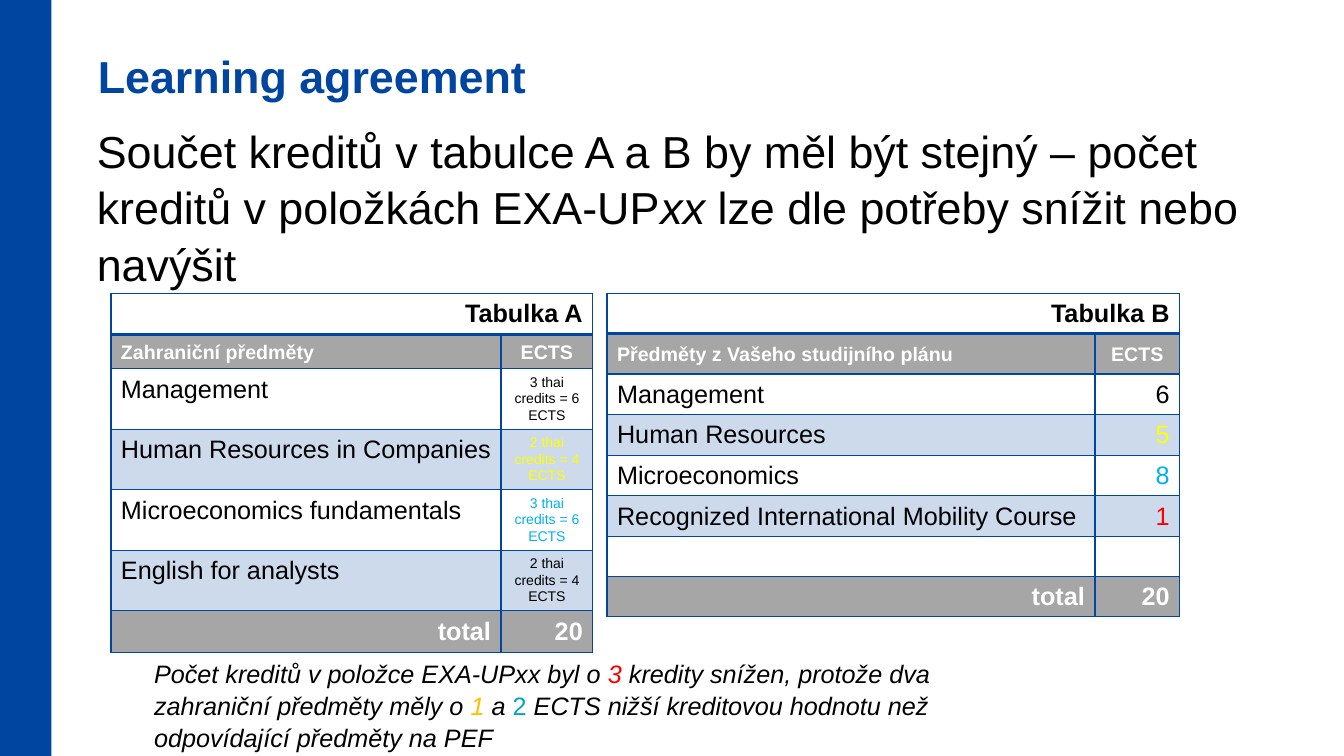
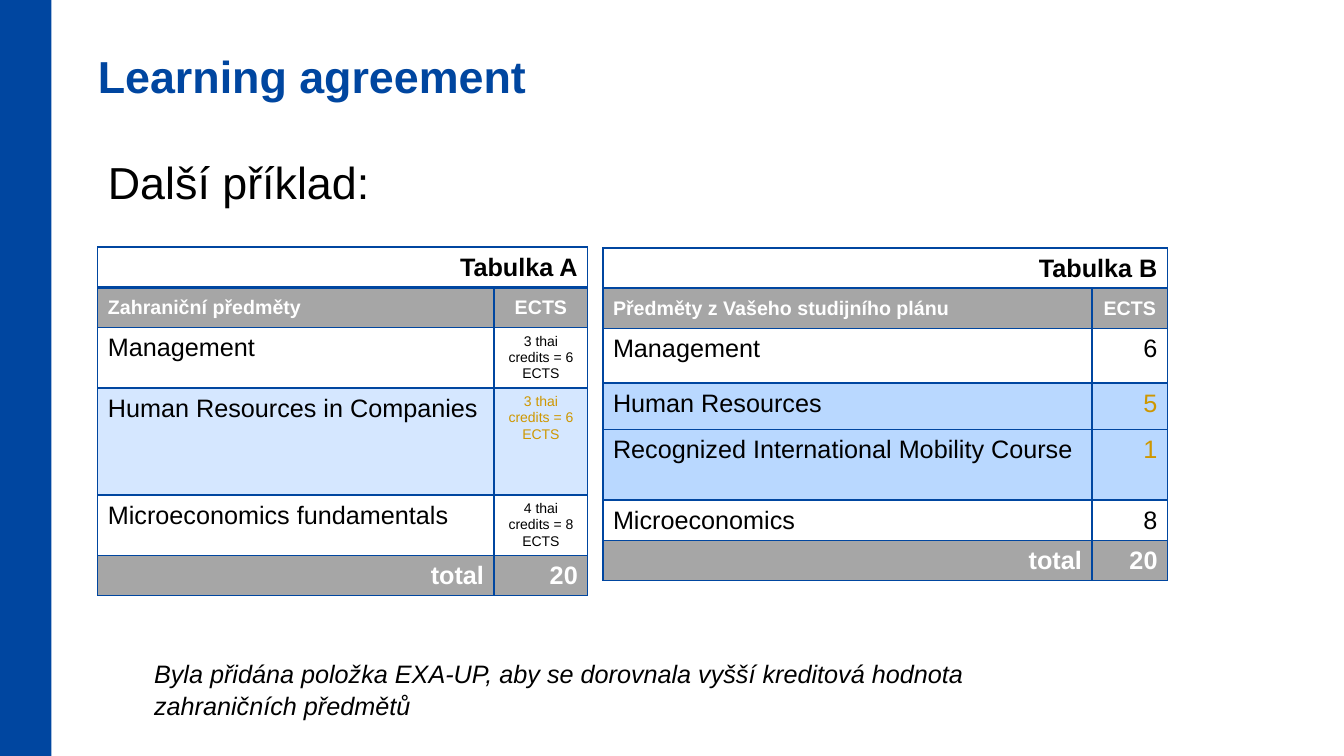
from dataclasses import dataclass

from lxml.etree import SubElement
from pptx import Presentation
from pptx.dml.color import RGBColor
from pptx.enum.shapes import MSO_SHAPE
from pptx.enum.text import MSO_ANCHOR, MSO_AUTO_SIZE, PP_ALIGN
from pptx.oxml import parse_xml
from pptx.oxml.ns import nsdecls, qn
from pptx.util import Inches, Pt


@dataclass(frozen=True)
class Theme:
    font: str = "Arial"
    blue: str = "0046A0"
    sky: str = "2D89FF"
    pale: str = "B9D8FF"
    gray: str = "A6A6A6"
    white: str = "FFFFFF"
    black: str = "000000"
    yellow: str = "FFFF00"
    cyan: str = "00B0F0"
    red: str = "FF0000"
    amber: str = "FFC000"
    teal: str = "00AAB4"
    ochre: str = "CE9700"
    heading: int = 32
    text: int = 18
    header: int = 14
    small: int = 10
    line_spacing: float = 1.05


theme = Theme()
LEFT, CENTER, RIGHT = PP_ALIGN.LEFT, PP_ALIGN.CENTER, PP_ALIGN.RIGHT


def write(frame, runs, size, color=theme.black, bold=False, italic=False, align=LEFT):
    paragraph = frame.paragraphs[0]
    properties = paragraph._p.get_or_add_pPr()
    properties.set("marL", "0")
    properties.set("indent", "0")
    SubElement(properties, qn("a:buNone"))
    paragraph.alignment = align
    paragraph.line_spacing = theme.line_spacing
    paragraph.space_before = Pt(0)
    font = paragraph.font
    font.name, font.size, font.bold, font.italic = theme.font, Pt(size), bold, italic
    font.color.rgb = RGBColor.from_string(color)
    for text, run_color, run_italic in runs:
        run = paragraph.add_run()
        run.text = text
        if run_color:
            run.font.color.rgb = RGBColor.from_string(run_color)
        if run_italic is not None:
            run.font.italic = run_italic


def style_cell(cell, text, size, fill, alpha=100, top=1, bottom=1, **style):
    cell.fill.solid()
    cell.fill.fore_color.rgb = RGBColor.from_string(fill)
    properties = cell._tc.get_or_add_tcPr()
    if alpha < 100:
        SubElement(properties.find(".//" + qn("a:srgbClr")), qn("a:alpha"), val=str(alpha * 1000))
    for position, (side, width) in enumerate(zip("LRTB", (1, 1, top, bottom))):
        properties.insert(position, parse_xml(
            f'<a:ln{side} {nsdecls("a")} w="{Pt(width)}"><a:solidFill>'
            f'<a:srgbClr val="{theme.blue}"/></a:solidFill></a:ln{side}>'))
    write(cell.text_frame, [(text, None, None)] if text else [], size, **style)


plain = (theme.white, 100)
tint = (theme.blue, 20)
sky_tint = (theme.sky, 20)
pale = (theme.pale, 100)
foreign = dict(name="Tabulka A", subjects="Zahraniční předměty",
               credit_size=theme.small, credit_align=CENTER)
home = dict(name="Tabulka B", subjects="Předměty z Vašeho studijního plánu",
            credit_size=theme.text, credit_align=RIGHT)

examples = [
    dict(
        intro=[
            ("Součet kreditů v tabulce A a B by měl být stejný – počet kreditů v položkách EXA-UP", None, None),
            ("xx", None, True),
            (" lze dle potřeby snížit nebo navýšit", None, None),
        ],
        intro_box=(0.86, 1.15, 12.17, 1.71),
        tables=[
            dict(foreign, at=(1.1, 2.91), columns=(3.87, 0.91), heights=(0.41, 0.34, 0.41), courses=[
                ("Management", "3 thai credits = 6 ECTS", theme.black, plain, 0.6),
                ("Human Resources in Companies", "2 thai credits = 4 ECTS", theme.yellow, tint, 0.6),
                ("Microeconomics fundamentals", "3 thai credits = 6 ECTS", theme.cyan, plain, 0.6),
                ("English for analysts", "2 thai credits = 4 ECTS", theme.black, tint, 0.6),
            ]),
            dict(home, at=(6.02, 2.91), columns=(4.84, 0.84), heights=(0.4, 0.4, 0.4), courses=[
                ("Management", "6", theme.black, plain, 0.4),
                ("Human Resources", "5", theme.yellow, tint, 0.41),
                ("Microeconomics", "8", theme.cyan, plain, 0.4),
                ("Recognized International Mobility Course", "1", theme.red, tint, 0.4),
                ("", "", theme.black, plain, 0.4),
            ]),
        ],
        note=[
            ("Počet kreditů v položce EXA-UPxx byl o ", None, None),
            ("3", theme.red, None),
            (" kredity snížen, protože dva zahraniční předměty měly o ", None, None),
            ("1", theme.amber, None),
            (" a ", None, None),
            ("2 ", theme.teal, False),
            ("ECTS nižší kreditovou hodnotu než odpovídající předměty na PEF", None, None),
        ],
        note_height=1.01,
    ),
    dict(
        intro=[("Další příklad:", None, None)],
        intro_box=(0.97, 1.46, 12.17, 0.64),
        tables=[
            dict(foreign, at=(0.97, 2.45), columns=(3.93, 0.93), heights=(0.4, 0.4, 0.4), courses=[
                ("Management", "3 thai credits = 6 ECTS", theme.black, plain, 0.6),
                ("Human Resources in Companies", "3 thai credits = 6 ECTS", theme.ochre, sky_tint, 1.06),
                ("Microeconomics fundamentals", "4 thai credits = 8 ECTS", theme.black, plain, 0.6),
            ]),
            dict(home, at=(5.98, 2.46), columns=(4.85, 0.75), heights=(0.4, 0.4, 0.4), courses=[
                ("Management", "6", theme.black, plain, 0.54),
                ("Human Resources", "5", theme.ochre, pale, 0.46),
                ("Recognized International Mobility Course", "1", theme.ochre, pale, 0.7),
                ("Microeconomics", "8", theme.black, plain, 0.4),
            ]),
        ],
        note=[("Byla přidána položka EXA-UP, aby se dorovnala vyšší kreditová hodnota "
               "zahraničních předmětů", None, None)],
        note_height=0.71,
    ),
]

deck = Presentation()
deck.slide_width, deck.slide_height = Inches(13.33), Inches(7.5)

for number, example in enumerate(examples):
    slide = deck.slides.add_slide(deck.slide_layouts[1])

    if number == 0:
        band = slide.shapes.add_shape(MSO_SHAPE.RECTANGLE, 0, 0, Inches(0.51), deck.slide_height)
        band.shadow.inherit = False
        band.fill.solid()
        band.fill.fore_color.rgb = RGBColor.from_string(theme.blue)
        band.line.fill.background()
        deck.slide_master.shapes.element.insert(2, band.element)

    title = slide.shapes.title
    intro = slide.placeholders[1]
    note = slide.shapes.add_textbox(0, 0, 0, 0)
    boxes = [
        (title, (0.97, 0.46, 11.96, 0.68)),
        (intro, example["intro_box"]),
        (note, (1.43, 6.47, 8.93, example["note_height"])),
    ]
    for box, place in boxes:
        box.left, box.top, box.width, box.height = map(Inches, place)
        box.text_frame.word_wrap = True
        box.text_frame.auto_size = MSO_AUTO_SIZE.NONE
        box.text_frame.vertical_anchor = MSO_ANCHOR.TOP
    frame = title.text_frame
    frame.margin_left = frame.margin_top = frame.margin_right = frame.margin_bottom = 0

    write(frame, [("Learning agreement", None, None)], theme.heading, theme.blue, bold=True)
    write(intro.text_frame, example["intro"], theme.heading)
    write(note.text_frame, example["note"], theme.text, italic=True)

    for plan in example["tables"]:
        name_height, header_height, total_height = plan["heights"]
        heights = [name_height, header_height, *(course[-1] for course in plan["courses"]), total_height]
        left, top = plan["at"]
        table = slide.shapes.add_table(
            len(heights), 2, Inches(left), Inches(top),
            Inches(sum(plan["columns"])), Inches(sum(heights))).table
        table.first_row = table.horz_banding = False
        for column, width in zip(table.columns, plan["columns"]):
            column.width = Inches(width)
        for row, height in zip(table.rows, heights):
            row.height = Inches(height)

        table.cell(0, 0).merge(table.cell(0, 1))
        for column, text in enumerate((plan["name"], "")):
            style_cell(table.cell(0, column), text, theme.text, theme.white,
                       bottom=2, bold=True, align=RIGHT)
        for column, (text, align) in enumerate(((plan["subjects"], LEFT), ("ECTS", CENTER))):
            header = table.cell(1, column)
            style_cell(header, text, theme.header, theme.gray, top=2,
                       color=theme.white, bold=True, align=align)
            header.vertical_anchor = MSO_ANCHOR.MIDDLE
        for row, (subject, credit, color, shade, height) in enumerate(plan["courses"], start=2):
            style_cell(table.cell(row, 0), subject, theme.text, *shade)
            style_cell(table.cell(row, 1), credit, plan["credit_size"], *shade,
                       color=color, align=plan["credit_align"])
        for column, text in enumerate(("total", "20")):
            style_cell(table.cell(len(heights) - 1, column), text, theme.text, theme.gray,
                       color=theme.white, bold=True, align=RIGHT)

deck.save("out.pptx")
